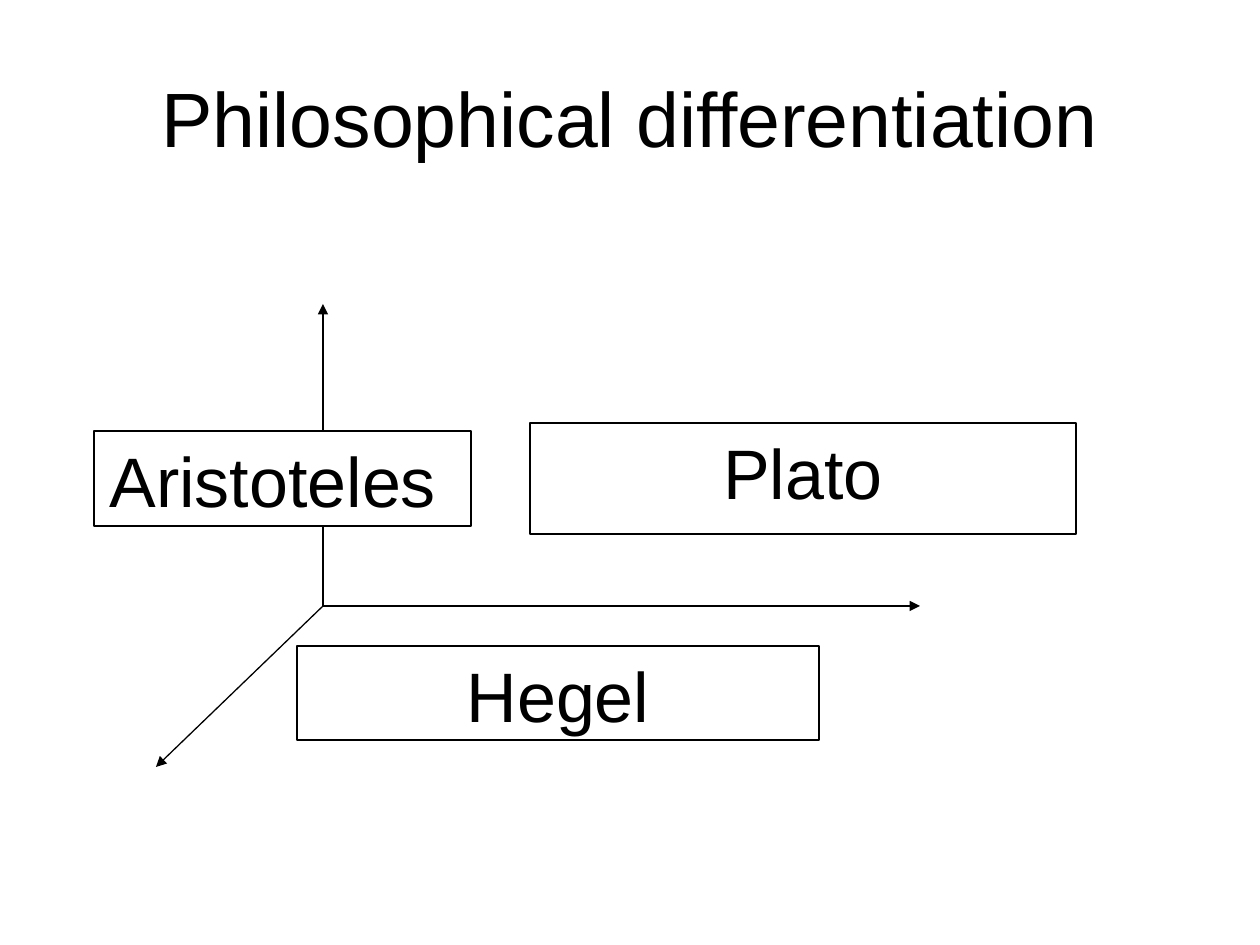
from pptx import Presentation
from pptx.dml.color import RGBColor
from pptx.enum.shapes import MSO_CONNECTOR, MSO_SHAPE
from pptx.enum.text import MSO_ANCHOR, PP_ALIGN
from pptx.oxml.ns import qn
from pptx.util import Pt
from lxml import etree

STRAIGHT = MSO_CONNECTOR.STRAIGHT
RECT = MSO_SHAPE.RECTANGLE
TOP, MIDDLE = MSO_ANCHOR.TOP, MSO_ANCHOR.MIDDLE
CENTER = PP_ALIGN.CENTER

TITLE = ("Philosophical differentiation", (63, 38, 1134, 157))
ORIGIN = (323, 606)
AXIS_ENDS = [(323, 304), (156, 767), (920, 606)]
PHILOSOPHERS = [
    ("Hegel", (297, 646, 522, 94)),
    ("Aristoteles ", (94, 431, 377, 95)),
    ("Plato", (530, 423, 546, 111)),
]

THEME = {
    "font": "Arial",
    "ink": RGBColor(0, 0, 0),
    "paper": RGBColor(255, 255, 255),
    "title": Pt(44),
    "label": Pt(40),
    "line": Pt(0.75),
}
SCALE = 914400 / 126


def emu(*lengths):
    return [round(n * SCALE) for n in lengths]


def write(sp, text, size, anchor):
    tf = sp.text_frame
    tf.word_wrap = True
    tf.vertical_anchor = anchor
    p = tf.paragraphs[0]
    p.alignment = CENTER
    r = p.add_run()
    r.text = text
    r.font.name = THEME["font"]
    r.font.size = size
    r.font.color.rgb = THEME["ink"]


def outline(sp):
    sp.line.color.rgb = THEME["ink"]
    sp.line.width = THEME["line"]


def add_axis(s, end):
    sp = s.shapes.add_connector(STRAIGHT, *emu(*ORIGIN, *end))
    outline(sp)
    etree.SubElement(sp.line._get_or_add_ln(), qn("a:tailEnd"), type="triangle")
    etree.SubElement(sp._element.spPr, qn("a:effectLst"))


def add_label(s, text, box):
    sp = s.shapes.add_shape(RECT, *emu(*box))
    sp.shadow.inherit = False
    sp.fill.solid()
    sp.fill.fore_color.rgb = THEME["paper"]
    outline(sp)
    write(sp, text, THEME["label"], TOP)


def main():
    prs = Presentation()
    prs.slide_width, prs.slide_height = emu(1260, 945)
    s = prs.slides.add_slide(prs.slide_layouts[6])
    text, box = TITLE
    write(s.shapes.add_textbox(*emu(*box)), text, THEME["title"], MIDDLE)
    for end in AXIS_ENDS:
        add_axis(s, end)
    for text, box in PHILOSOPHERS:
        add_label(s, text, box)
    prs.save("out.pptx")


if __name__ == "__main__":
    main()
